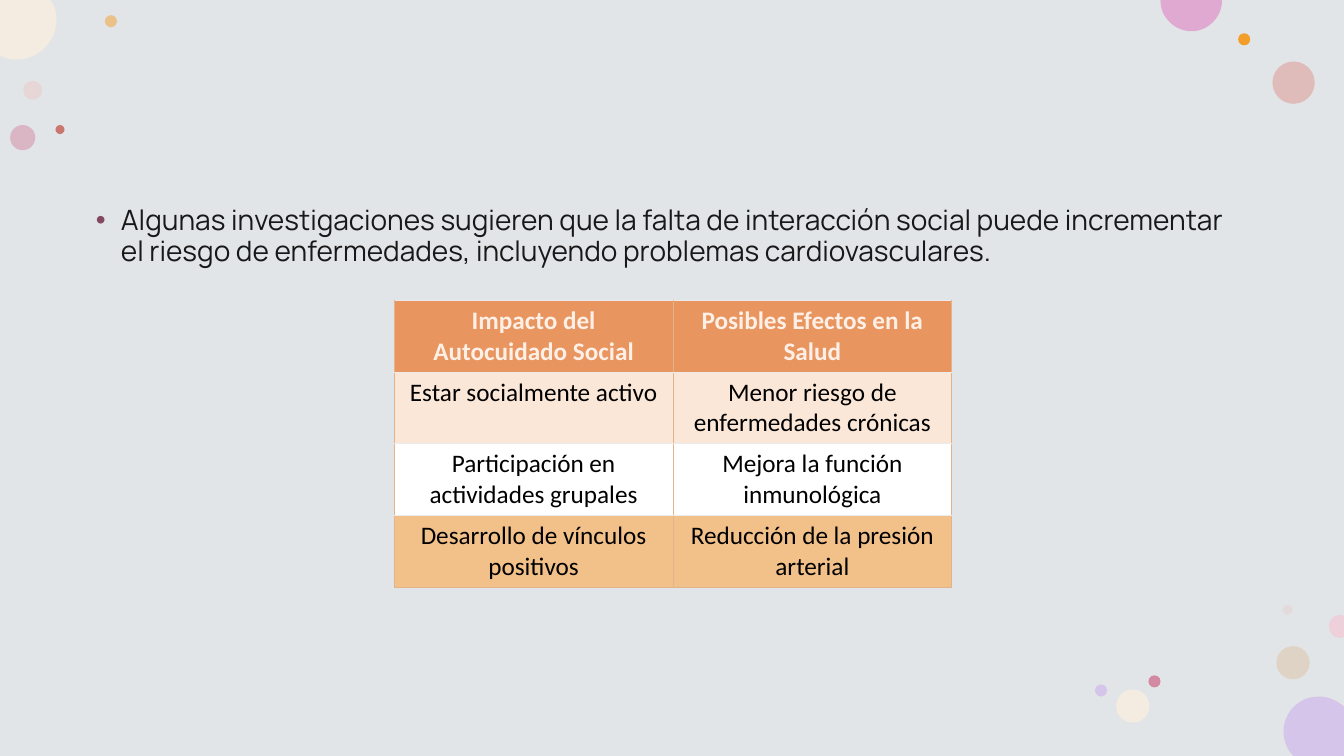
from lxml import etree
from pptx import Presentation
from pptx import util as u
from pptx.dml.color import RGBColor
from pptx.enum import shapes, text
from pptx.oxml import ns

WIDTH, HEIGHT = 13.33, 7.5

BUBBLES = [
    (0.23, 0.8, 0.19, "EAC9C5", 50),
    (1.04, 0.15, 0.12, "F39E29", 50),
    (12.66, 6.41, 0.33, "DEC2A6", 50),
    (0.1, 1.24, 0.25, "D389A2", 50),
    (12.62, 0.61, 0.42, "DFADA9", 72),
    (12.28, 0.33, 0.12, "F39E29", 100),
    (12.72, 6, 0.1, "E3BEBE", 28),
    (11.39, 6.7, 0.12, "D389A2", 100),
    (11.07, 6.84, 0.33, "F4EBE1", 100),
    (10.86, 6.79, 0.12, "D5C5EA", 100),
    (0.55, 1.24, 0.09, "CA776F", 100),
]
EDGE_BUBBLES = [
    ("D5C5EA", (13.08, 6.91), [
        [(13.18, 6.91), (13.26, 6.95), (13.33, 7.01)],
        [(13.33, 7.5)], [(12.83, 7.5)], [(12.81, 7.48)],
        [(12.76, 7.42), (12.73, 7.34), (12.73, 7.26)],
        [(12.73, 7.06), (12.89, 6.91), (13.08, 6.91)]]),
    ("F4EBE1", (0, 0), [
        [(0.5, 0)], [(0.53, 0.05)],
        [(0.55, 0.09), (0.56, 0.14), (0.56, 0.2)],
        [(0.56, 0.41), (0.38, 0.59), (0.17, 0.59)],
        [(0.11, 0.59), (0.06, 0.58), (0.02, 0.56)],
        [(0, 0.55)]]),
    ("DFA9D1", (11.51, 0), [
        [(12.12, 0)], [(12.12, 0.01)],
        [(12.12, 0.17), (11.98, 0.31), (11.82, 0.31)],
        [(11.65, 0.31), (11.51, 0.17), (11.51, 0.01)]]),
    ("EDD0DA", (13.29, 6.1), [
        [(13.33, 6.11)], [(13.33, 6.32)], [(13.29, 6.33)],
        [(13.23, 6.33), (13.18, 6.28), (13.18, 6.21)],
        [(13.18, 6.15), (13.23, 6.1), (13.29, 6.1)]]),
]
ROWS = [
    ("Impacto del Autocuidado Social", "Posibles Efectos en la Salud"),
    ("Estar socialmente activo", "Menor riesgo de enfermedades crónicas"),
    ("Participación en actividades grupales", "Mejora la función inmunológica"),
    ("Desarrollo de vínculos positivos", "Reducción de la presión arterial"),
]
ROW_FILLS = ["E8955F", "FBE7D8", "FFFFFF", "F2C089"]


def paint(fill, color):
    fill.solid()
    fill.fore_color.rgb = RGBColor.from_string(color)


def add_element(parent, tag, **attributes):
    return etree.SubElement(parent, ns.qn(tag), attributes)


def write(frame, wording, font="Calibri", size=18, color="000000", bold=False, align=None):
    paragraph = frame.paragraphs[0]
    paragraph.alignment = align
    run = paragraph.add_run()
    run.text = wording
    run.font.name = font
    run.font.size = u.Pt(size)
    run.font.bold = bold
    run.font.color.rgb = RGBColor.from_string(color)
    return paragraph


def finish_shape(shape, color, opacity=100):
    shape.shadow.inherit = False
    shape.line.fill.background()
    paint(shape.fill, color)
    if opacity < 100:
        tint = shape.fill._xPr.find(ns.qn("a:solidFill"))[0]
        add_element(tint, "a:alpha", val=str(opacity * 1000))


def add_preset(slide, preset, left, top, width, height, color, opacity=100):
    box = [u.Inches(length) for length in (left, top, width, height)]
    finish_shape(slide.shapes.add_shape(preset, *box), color, opacity)


def add_edge_bubble(slide, color, start, segments):
    builder = slide.shapes.build_freeform(*start, scale=u.Inches(1) / 1000)
    builder = slide.shapes.build_freeform(*map(u.Inches, start), scale=1.0)
    points = [tuple(map(u.Inches, point)) for segment in segments for point in segment]
    builder.add_line_segments(points, close=True)
    shape = builder.convert_to_shape()
    lines = iter(list(shape.element.iter(ns.qn("a:lnTo"))))
    for segment in segments:
        group = [next(lines) for point in segment]
        if len(group) == 3:
            curve = etree.Element(ns.qn("a:cubicBezTo"))
            group[0].addprevious(curve)
            for line in group:
                curve.append(line[0])
                line.getparent().remove(line)
    finish_shape(shape, color)


def add_background(slide):
    add_preset(slide, shapes.MSO_SHAPE.RECTANGLE, 0, 0, WIDTH, HEIGHT, "E2E5E8")
    for left, top, diameter, color, opacity in BUBBLES:
        add_preset(slide, shapes.MSO_SHAPE.OVAL, left, top, diameter, diameter, color, opacity)
    for bubble in EDGE_BUBBLES:
        add_edge_bubble(slide, *bubble)


def add_body(slide, left, top, width, height):
    body = slide.placeholders[1]
    slide.shapes.element.append(body.element)
    body.left, body.top = u.Inches(left), u.Inches(top)
    body.width, body.height = u.Inches(width), u.Inches(height)
    frame = body.text_frame
    frame.word_wrap = True
    frame.auto_size = text.MSO_AUTO_SIZE.NONE
    frame.vertical_anchor = text.MSO_ANCHOR.TOP
    paragraph = write(
        frame,
        "Algunas investigaciones sugieren que la falta de interacción social puede "
        "incrementar el riesgo de enfermedades, incluyendo problemas cardiovasculares.",
        font="Manrope", size=20, color="181818")
    paragraph.line_spacing = 0.9
    paragraph.space_before = u.Pt(10)
    properties = paragraph._p.get_or_add_pPr()
    properties.set("marL", str(u.Inches(0.25)))
    properties.set("indent", str(-u.Inches(0.25)))
    bullet_color = add_element(properties, "a:buClr")
    add_element(bullet_color, "a:srgbClr", val="834861")
    add_element(properties, "a:buFont", typeface="Arial")
    add_element(properties, "a:buChar", char="•")


def set_borders(cell, **colors):
    properties = cell._tc.get_or_add_tcPr()
    for position, (side, color) in enumerate(colors.items()):
        line = etree.Element(ns.qn("a:ln" + side), w=str(u.Pt(0.6)))
        fill = add_element(line, "a:solidFill")
        add_element(fill, "a:srgbClr", val=color)
        properties.insert(position, line)


def add_effects_table(slide, left, top, width, height):
    box = [u.Inches(length) for length in (left, top, width, height)]
    table = slide.shapes.add_table(len(ROWS), len(ROWS[0]), *box).table
    for row_index, (wordings, fill) in enumerate(zip(ROWS, ROW_FILLS)):
        header = row_index == 0
        last = row_index == len(ROWS) - 1
        for column_index, wording in enumerate(wordings):
            cell = table.cell(row_index, column_index)
            paint(cell.fill, fill)
            set_borders(cell, L="E2B48E", R="E2B48E", T="EBEBEB",
                        B="E2B48E" if last else "EBEBEB")
            write(cell.text_frame, wording, bold=header, align=text.PP_ALIGN.CENTER,
                  color="FFF0E7" if header else "000000")


def main():
    presentation = Presentation()
    presentation.slide_width = u.Inches(WIDTH)
    presentation.slide_height = u.Inches(HEIGHT)
    slide = presentation.slides.add_slide(presentation.slide_layouts[1])
    title = slide.shapes.title.element
    title.getparent().remove(title)
    add_background(slide)
    add_body(slide, 0.85, 2, 11.66, 4.76)
    add_effects_table(slide, 3.91, 2.98, 5.53, 2.8)
    presentation.save("out.pptx")


if __name__ == "__main__":
    main()
